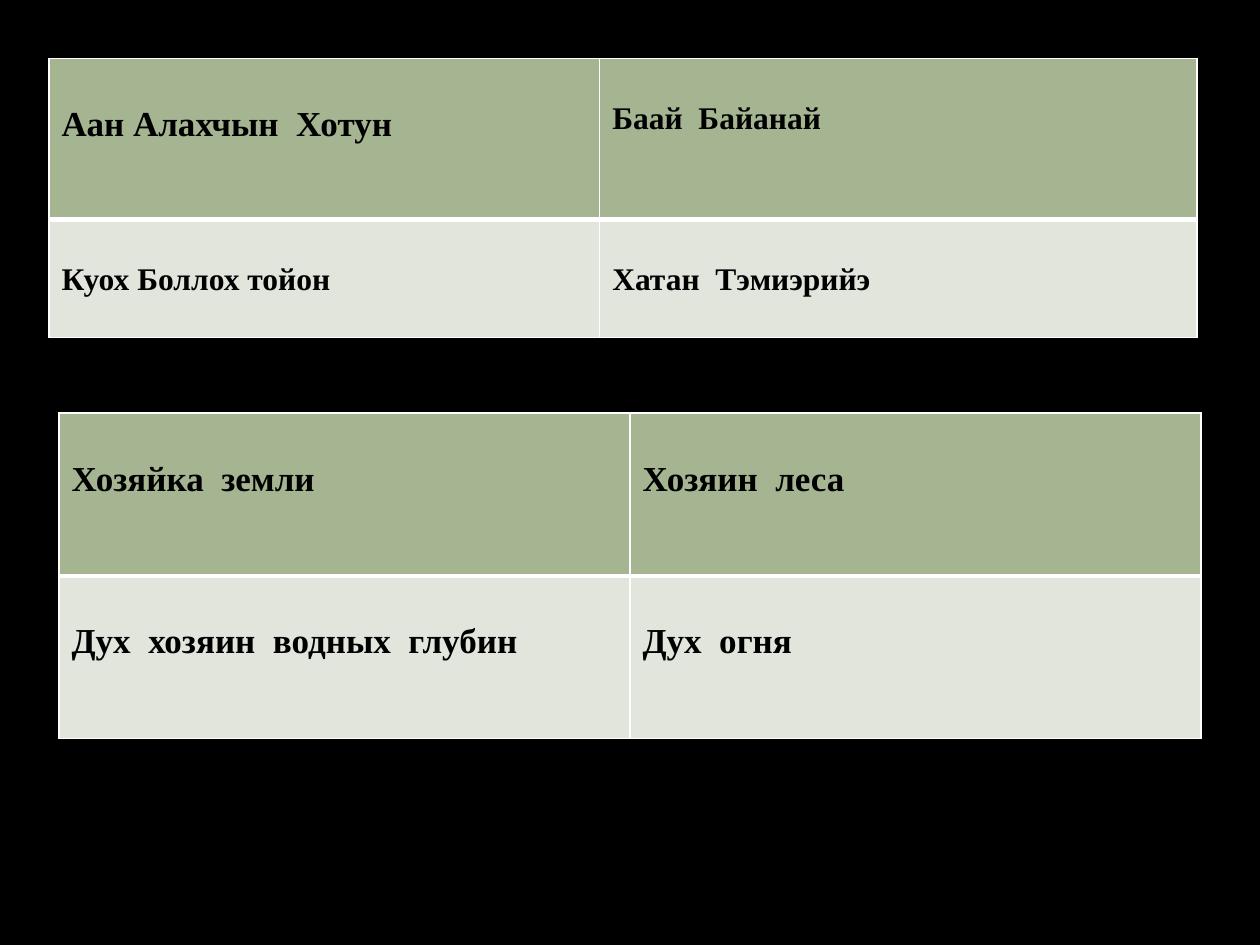
from lxml import etree
from pptx import Presentation
from pptx import util as u
from pptx.dml.color import RGBColor
from pptx.oxml import ns

THEME = {
    "background": RGBColor.from_string("000000"),
    "text": RGBColor.from_string("000000"),
    "rows": [RGBColor.from_string("A5B592"), RGBColor.from_string("E1E5DC")],
    "border": "FFFFFF",
    "thin": 1,
    "thick": 3,
    "font": "Times New Roman",
    "large": 20,
    "medium": 18,
}


def add_border(cell, position, side, width):
    line = etree.Element(ns.qn(f"a:ln{side}"), w=str(u.Pt(width)))
    fill = etree.SubElement(line, ns.qn("a:solidFill"))
    etree.SubElement(fill, ns.qn("a:srgbClr"), val=THEME["border"])
    cell._tc.get_or_add_tcPr().insert(position, line)


spirit_names = {
    "origin": (0.99, 1.18),
    "columns": [11.1, 12.04],
    "rows": [3.24, 2.38],
    "cells": [
        [("Аан Алахчын  Хотун", "large"), ("Баай  Байанай", "medium")],
        [("Куох Боллох тойон", "medium"), ("Хатан  Тэмиэрийэ", "medium")],
    ],
}
spirit_roles = {
    "origin": (1.19, 8.33),
    "columns": [11.51, 11.51],
    "rows": [3.28, 3.28],
    "cells": [
        [("Хозяйка  земли", "large"), ("Хозяин  леса", "large")],
        [("Дух  хозяин  водных  глубин", "large"), ("Дух  огня", "large")],
    ],
}

deck = Presentation()
deck.slide_width, deck.slide_height = u.Cm(25.4), u.Cm(19.05)
slide = deck.slides.add_slide(deck.slide_layouts[6])
slide.background.fill.solid()
slide.background.fill.fore_color.rgb = THEME["background"]

for group in (spirit_names, spirit_roles):
    left, top = group["origin"]
    grid = slide.shapes.add_table(
        2, 2, u.Cm(left), u.Cm(top),
        u.Cm(sum(group["columns"])), u.Cm(sum(group["rows"])),
    ).table
    for column, width in zip(grid.columns, group["columns"]):
        column.width = u.Cm(width)
    for row, height in zip(grid.rows, group["rows"]):
        row.height = u.Cm(height)

    for row_index, entries in enumerate(group["cells"]):
        header = row_index == 0
        widths = {
            "L": THEME["thin"],
            "R": THEME["thin"],
            "T": THEME["thin"] if header else THEME["thick"],
            "B": THEME["thick"] if header else THEME["thin"],
        }
        for column_index, (wording, level) in enumerate(entries):
            cell = grid.cell(row_index, column_index)
            cell.fill.solid()
            cell.fill.fore_color.rgb = THEME["rows"][row_index]
            for position, (side, width) in enumerate(widths.items()):
                add_border(cell, position, side, width)
            size = THEME[level]
            cell.margin_top = u.Cm(0.13) + u.Pt(1.15 * size)
            run = cell.text_frame.paragraphs[0].add_run()
            run.text = wording
            run.font.name = THEME["font"]
            run.font.size = u.Pt(size)
            run.font.bold = True
            run.font.color.rgb = THEME["text"]

deck.save("out.pptx")
